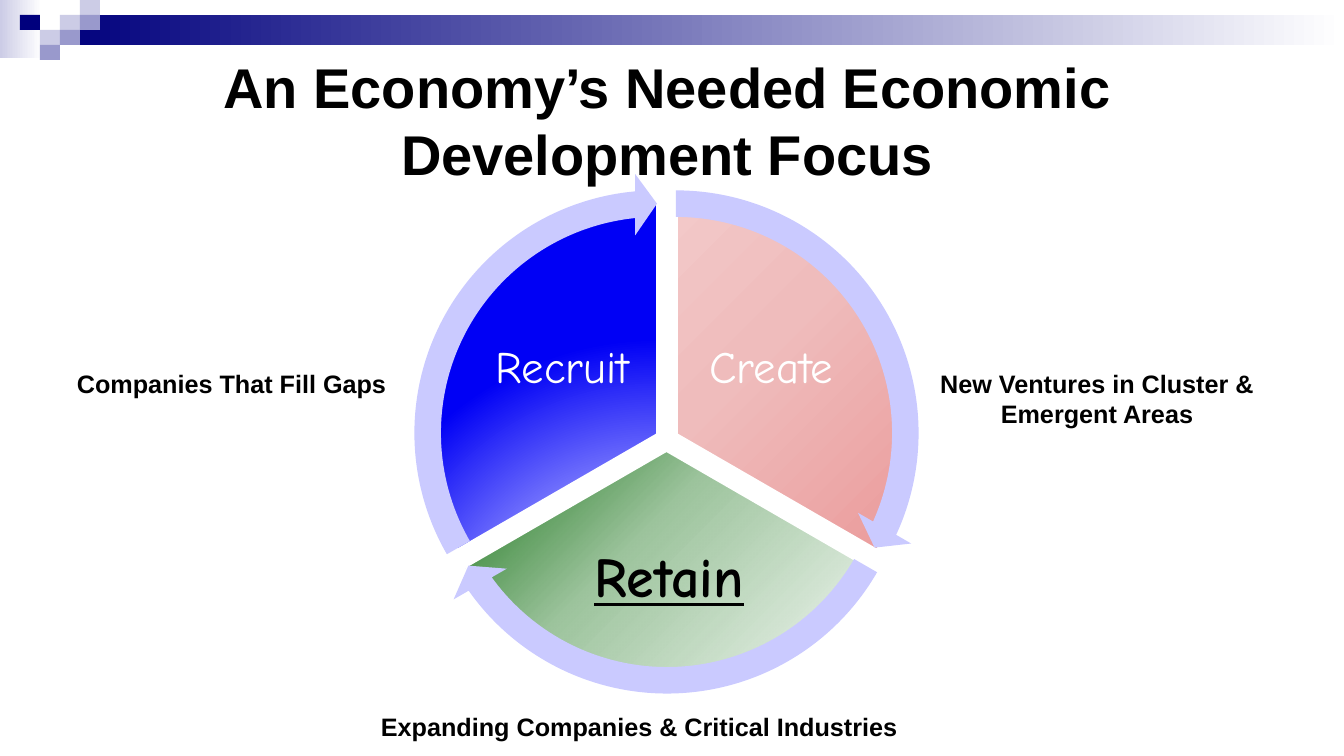
from lxml.etree import SubElement
from pptx import Presentation
from pptx.dml.color import RGBColor
from pptx.enum.shapes import MSO_SHAPE
from pptx.enum.text import MSO_ANCHOR, PP_ALIGN
from pptx.oxml.ns import qn
from pptx.util import Pt

PX = 914400 / 100.8
DEGREE = 0.6  # adjustment units in one degree
WHITE, BLACK, NAVY, LILAC, MAUVE = "FFFFFF", "000000", "00007D", "CCCCE6", "9999CC"
LEFT, CENTER = PP_ALIGN.LEFT, PP_ALIGN.CENTER

deck = Presentation()
deck.slide_width, deck.slide_height = round(1344 * PX), round(756 * PX)
page = deck.slides.add_slide(deck.slide_layouts[6])


def add_filled(preset, box, fill, direction=None):
    """Add a shape; fill is a hex colour or a list of (percent, colour, alpha) stops.

    direction is an angle in degrees, or the l, t, r, b percents of a circular focus.
    """
    shape = page.shapes.add_shape(preset, *(round(n * PX) for n in box))
    shape.shadow.inherit = False
    shape.line.fill.background()
    if isinstance(fill, str):
        shape.fill.solid()
        shape.fill.fore_color.rgb = RGBColor.from_string(fill)
        return shape
    shape.fill.gradient()
    gradient = shape._element.spPr.find(qn("a:gradFill"))
    for child in list(gradient):
        gradient.remove(child)
    stops = SubElement(gradient, qn("a:gsLst"))
    for percent, color, alpha in fill:
        stop = SubElement(stops, qn("a:gs"), pos=str(percent * 1000))
        tone = SubElement(stop, qn("a:srgbClr"), val=color)
        if alpha < 100:
            SubElement(tone, qn("a:alpha"), val=str(alpha * 1000))
    if isinstance(direction, int):
        SubElement(gradient, qn("a:lin"), ang=str(direction * 60000), scaled="0")
    else:
        focus = SubElement(gradient, qn("a:path"), path="circle")
        sides = {side: str(n * 1000) for side, n in zip("ltrb", direction)}
        SubElement(focus, qn("a:fillToRect"), **sides)
    return shape


def add_text(box, text, size, font="Arial", color=BLACK, bold=True, align=CENTER,
             anchor=MSO_ANCHOR.TOP, inset=None, spacing=None, underline=None):
    frame = page.shapes.add_textbox(*(round(n * PX) for n in box)).text_frame
    frame.word_wrap = True
    frame.vertical_anchor = anchor
    if inset is not None:
        frame.margin_left = frame.margin_right = round(inset * PX)
        frame.margin_top = frame.margin_bottom = round(inset * PX)
    frame.text = text
    for para in frame.paragraphs:
        para.alignment = align
        para.line_spacing = spacing
        for span in para.runs:
            span.font.name = font
            span.font.size = Pt(size)
            span.font.bold = bold
            span.font.underline = underline
            span.font.color.rgb = RGBColor.from_string(color)


# Header band and its mosaic of tiles
add_filled(MSO_SHAPE.RECTANGLE, (0, 0, 42, 58), [(0, LILAC, 100), (100, WHITE, 100)], 0)
add_filled(MSO_SHAPE.RECTANGLE, (60, 15, 1284, 30), [(0, NAVY, 100), (100, WHITE, 100)], 0)
tiles = [(3, 1, LILAC), (4, 0, LILAC), (4, 1, MAUVE), (2, 2, LILAC),
         (1, 1, NAVY), (3, 2, MAUVE), (2, 3, MAUVE)]
for column, row, color in tiles:
    add_filled(MSO_SHAPE.RECTANGLE, (column * 20, row * 15, 20, 15), color)

# Title and the labels around the wheel
add_text((62, 65, 1210, 109), "An Economy’s Needed Economic Development Focus", 40,
         anchor=MSO_ANCHOR.MIDDLE)
labels = [
    ((67, 363, 350, 40), "Companies That Fill Gaps", LEFT),
    ((371, 706, 593, 40), "Expanding Companies & Critical Industries", LEFT),
    ((928, 363, 338, 72), "New Ventures in Cluster &\nEmergent Areas", CENTER),
]
for box, text, align in labels:
    add_text(box, text, 18, align=align)

# Wheel: three wedges of 120 degrees, then an arrow along each rim
pinks = [(0, "E98F8F", 100), (50, "EFBCBC", 100), (75, "F3C8C8", 100), (100, "F7DEDE", 100)]
greens = [(0, "006600", 100), (32, "006600", 83), (56, "006600", 39), (84, "006600", 15)]
blues = [(0, "D6D6FF", 100), (46, "9E9EFF", 100), (100, "0000F5", 100)]
small = dict(size=32, color=WHITE, bold=False, inset=4)
large = dict(size=40, color=BLACK, bold=True, inset=6, underline=True)
wedges = [
    ("Create", 270, (445, 203), pinks, 225, (689, 300, 165, 138), small),
    ("Retain", 30, (435, 219), greens, 45, (545, 519, 248, 121), large),
    ("Recruit", 150, (426, 203), blues, (50, 130, 50, -30), (480, 300, 165, 138), small),
]
for name, start, corner, stops, direction, text_box, style in wedges:
    wedge = add_filled(MSO_SHAPE.PIE, (*corner, 463, 463), stops, direction)
    wedge.adjustments[0] = start * DEGREE
    wedge.adjustments[1] = (start + 120) % 360 * DEGREE
    wedge.line.color.rgb = RGBColor.from_string(WHITE)
    wedge.line.width = Pt(2)
    add_text(text_box, name, font="Comic Neue", anchor=MSO_ANCHOR.MIDDLE, spacing=0.9, **style)

head_angle = 5.46
for (left, top), start in [((416, 173), 270), ((407, 191), 30), ((397, 173), 150)]:
    arrow = add_filled(MSO_SHAPE.CIRCULAR_ARROW, (left, top, 520, 520), "CACAFF")
    tip = (start + 120) % 360 - head_angle
    settings = (0.051, head_angle * DEGREE, tip * DEGREE, start * DEGREE, 0.059)
    for index, value in enumerate(settings):
        arrow.adjustments[index] = value

deck.save("out.pptx")
